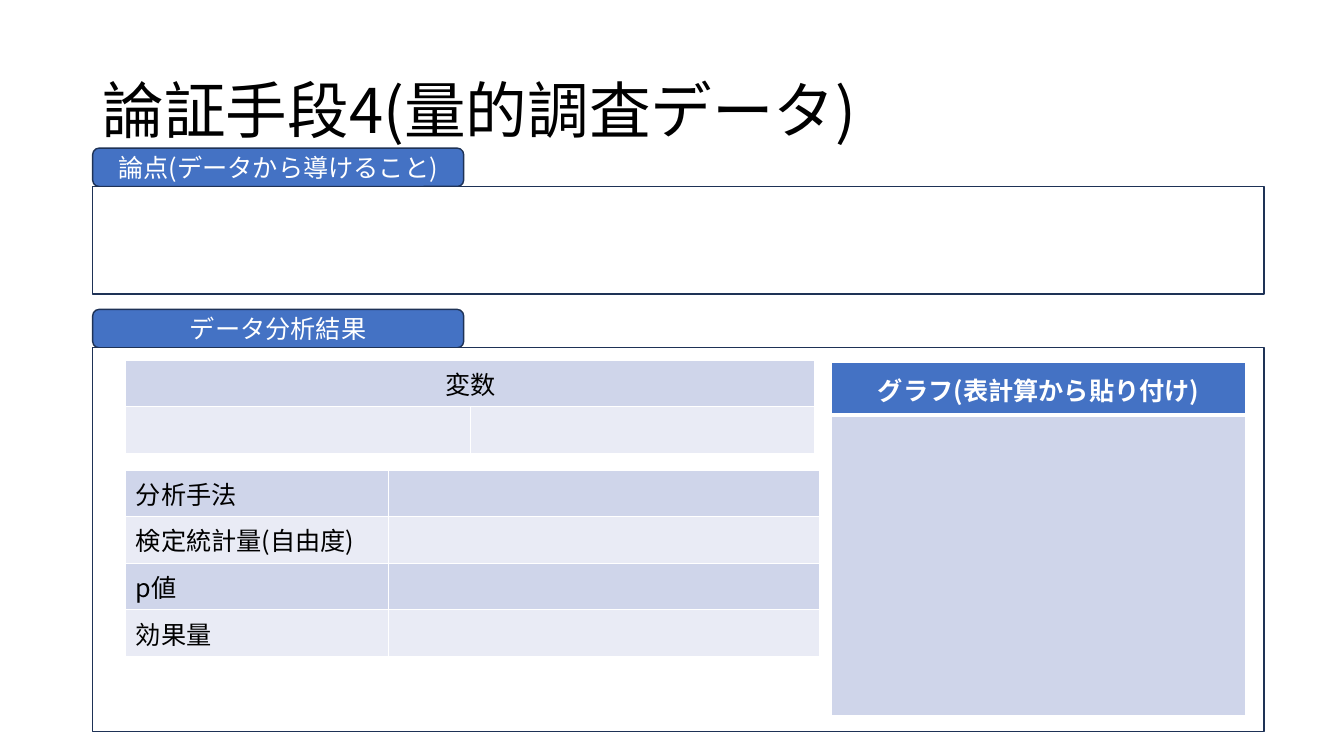
from dataclasses import dataclass
from lxml.etree import SubElement as Sub
from pptx import Presentation
from pptx.dml.color import RGBColor as RGB
from pptx.enum.shapes import MSO_SHAPE as Form
from pptx.enum.text import MSO_ANCHOR as Anchor, PP_ALIGN as Align
from pptx.oxml.ns import qn
from pptx.util import Pt

# Content
TITLE = "論証手段4(量的調査データ)"
PANELS = [  # label, top of tab, height of box
    ("論点(データから導けること)", 105.8, 77),
    ("データ分析結果", 221, 274.3),
]
VARS = [["変数", ""], ["", ""]]
STATS = [["分析手法", ""], ["検定統計量(自由度)", ""], ["p値", ""], ["効果量", ""]]
GRAPH = [["グラフ(表計算から貼り付け)"], [""]]


@dataclass(frozen=True)
class Theme:
    font: str = "Noto Sans CJK JP"
    big: int = 44
    body: int = 18
    black: str = "000000"
    white: str = "FFFFFF"
    blue: str = "4472C4"
    navy: str = "1E3256"
    dark: str = "CFD5EA"
    light: str = "E9EBF5"


T = Theme()
LEFT, WIDE = 66.2, 836.6
TAB_W, TAB_H = 265, 27.4
ROW = 33.3

deck = Presentation()
deck.slide_width, deck.slide_height = Pt(960), Pt(540)
slide = deck.slides.add_slide(deck.slide_layouts[6])


def write(frame, text, size=T.body, color=T.black, bold=False,
          align=Align.LEFT, space=None):
    para = frame.paragraphs[0]
    para.alignment, para.line_spacing = align, space
    run = para.add_run()
    run.text = text
    font = run.font
    font.name, font.size, font.bold = T.font, Pt(size), bold
    font.color.rgb = RGB.from_string(color)
    Sub(font._element, qn("a:ea"), typeface=T.font)


def box(form, x, y, w, h, fill):
    shape = slide.shapes.add_shape(form, Pt(x), Pt(y), Pt(w), Pt(h))
    shape.shadow.inherit = False
    shape.fill.solid()
    shape.fill.fore_color.rgb = RGB.from_string(fill)
    shape.line.color.rgb = RGB.from_string(T.navy)
    shape.line.width = Pt(1)
    return shape


def paint(cell, fill, top=1, low=1):
    props = cell._tc.get_or_add_tcPr()
    for side, width in zip("LRTB", (1, 1, top, low)):
        line = Sub(props, qn(f"a:ln{side}"), w=str(Pt(width)))
        Sub(Sub(line, qn("a:solidFill")), qn("a:srgbClr"), val=T.white)
    cell.fill.solid()
    cell.fill.fore_color.rgb = RGB.from_string(fill)


def grid(data, x, y, cols, rows, head=False):
    table = slide.shapes.add_table(len(rows), len(cols), Pt(x), Pt(y),
                                   Pt(sum(cols)), Pt(sum(rows))).table
    table.first_row = table.horz_banding = False
    for col, width in zip(table.columns, cols):
        col.width = Pt(width)
    for r, (row, tall) in enumerate(zip(data, rows)):
        table.rows[r].height = Pt(tall)
        for c, text in enumerate(row):
            cell = table.cell(r, c)
            if head:
                paint(cell, T.dark if r else T.blue,
                      top=3 if r else 1, low=1 if r else 3)
            else:
                paint(cell, T.light if r % 2 else T.dark)
            if text:
                write(cell.text_frame, text, bold=head,
                      color=T.white if head else T.black,
                      align=Align.LEFT if data is STATS else Align.CENTER)
                if data is not STATS:
                    cell.vertical_anchor = Anchor.MIDDLE
    return table


# Title
frame = slide.shapes.add_textbox(Pt(LEFT), Pt(28.8), Pt(828), Pt(104.4)).text_frame
frame.word_wrap = True
frame.vertical_anchor = Anchor.MIDDLE
write(frame, TITLE, size=T.big, space=0.9)

# Panels with their tabs
for label, top, tall in PANELS:
    tab = box(Form.ROUNDED_RECTANGLE, LEFT, top, TAB_W, TAB_H, T.blue)
    tab.text_frame.vertical_anchor = Anchor.MIDDLE
    write(tab.text_frame, label, color=T.white, align=Align.CENTER)
    box(Form.RECTANGLE, LEFT, top + TAB_H, WIDE, tall, T.white)

# Tables
names = grid(VARS, 89.8, 257.3, [246.2] * 2, [ROW] * 2)
names.cell(0, 0).merge(names.cell(0, 1))
grid(STATS, 89.8, 335.8, [187.8, 308], [ROW] * 4)
grid(GRAPH, 594, 259.2, [295.9], [37.4, 214.6], head=True)

deck.save("out.pptx")
